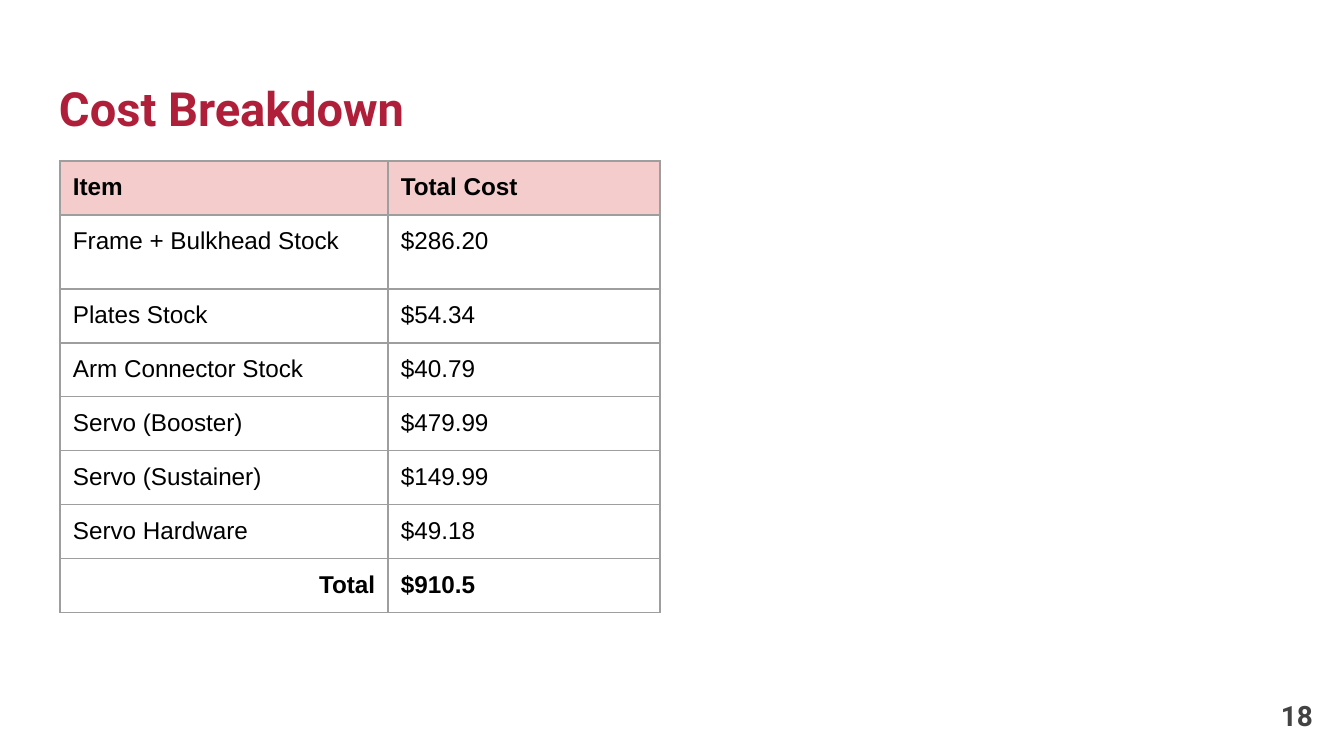
from dataclasses import dataclass

from lxml.etree import SubElement
from pptx import Presentation
from pptx.dml.color import RGBColor
from pptx.enum.text import MSO_ANCHOR as Anchor, MSO_AUTO_SIZE as AutoSize, PP_ALIGN as Align
from pptx.oxml.ns import qn
from pptx.util import Pt

EMU_PER_PX = 914400 / 134.4
WIDTH, HEIGHT = 1344, 756


def px(length):
    return round(length * EMU_PER_PX)


@dataclass(frozen=True)
class Theme:
    heading_font: str = "Roboto"
    body_font: str = "Arial"
    title_color: str = "AF1F39"
    number_color: str = "434343"
    text_color: str = "000000"
    header_fill: str = "F4CCCC"
    border_color: str = "9E9E9E"
    title_size: float = 25.2
    number_size: float = 15
    table_size: float = 13
    border_width: float = 0.75
    inset: int = 13


class SlideBuilder:
    def __init__(self, presentation, theme):
        self.theme = theme
        title_only = presentation.slide_layouts[5]
        self.slide = presentation.slides.add_slide(title_only)

    def set_text(self, frame, text, font, size, color, bold=True, align=Align.LEFT):
        frame.text = text
        paragraph = frame.paragraphs[0]
        paragraph.alignment = align
        style = paragraph.runs[0].font
        style.name, style.size, style.bold = font, Pt(size), bold
        style.color.rgb = RGBColor.from_string(color)

    def set_margins(self, target):
        inset = px(self.theme.inset)
        target.margin_left = target.margin_right = inset
        target.margin_top = target.margin_bottom = inset

    def set_frame(self, shape, anchor):
        frame = shape.text_frame
        frame.word_wrap = True
        frame.auto_size = AutoSize.NONE
        frame.vertical_anchor = anchor
        self.set_margins(frame)
        return frame

    def title(self, text, left, top, width, height):
        shape = self.slide.shapes.title
        shape.left, shape.top = px(left), px(top)
        shape.width, shape.height = px(width), px(height)
        theme = self.theme
        self.set_text(self.set_frame(shape, Anchor.TOP), text,
                      theme.heading_font, theme.title_size, theme.title_color)

    def page_number(self, text, left, top, width, height):
        shape = self.slide.shapes.add_textbox(px(left), px(top), px(width), px(height))
        theme = self.theme
        self.set_text(self.set_frame(shape, Anchor.MIDDLE), text, theme.heading_font,
                      theme.number_size, theme.number_color, align=Align.RIGHT)

    def cell_borders(self, cell):
        properties = cell._tc.get_or_add_tcPr()
        for side in ("a:lnL", "a:lnR", "a:lnT", "a:lnB"):
            line = SubElement(properties, qn(side), w=str(Pt(self.theme.border_width)))
            fill = SubElement(line, qn("a:solidFill"))
            SubElement(fill, qn("a:srgbClr"), val=self.theme.border_color)

    def table(self, rows, left, top, column_widths, row_heights):
        theme = self.theme
        table = self.slide.shapes.add_table(
            len(rows), len(column_widths), px(left), px(top),
            px(sum(column_widths)), px(sum(row_heights))).table
        table.horz_banding = False
        for column, width in zip(table.columns, column_widths):
            column.width = px(width)
        last = len(rows) - 1
        for index, (values, height) in enumerate(zip(rows, row_heights)):
            table.rows[index].height = px(height)
            for column, value in enumerate(values):
                cell = table.cell(index, column)
                self.set_margins(cell)
                self.cell_borders(cell)
                if index == 0:
                    cell.fill.solid()
                    cell.fill.fore_color.rgb = RGBColor.from_string(theme.header_fill)
                else:
                    cell.fill.background()
                total_label = index == last and column == 0
                self.set_text(cell.text_frame, value, theme.body_font, theme.table_size,
                              theme.text_color, bold=index in (0, last),
                              align=Align.RIGHT if total_label else Align.LEFT)


COSTS = [
    ("Item", "Total Cost"),
    ("Frame + Bulkhead Stock", "$286.20"),
    ("Plates Stock", "$54.34"),
    ("Arm Connector Stock", "$40.79"),
    ("Servo (Booster)", "$479.99"),
    ("Servo (Sustainer)", "$149.99"),
    ("Servo Hardware", "$49.18"),
    ("Total", "$910.5"),
]


def main():
    presentation = Presentation()
    presentation.slide_width, presentation.slide_height = px(WIDTH), px(HEIGHT)
    builder = SlideBuilder(presentation, Theme())

    # Heading
    builder.title("Cost Breakdown", 46, 66, 1253, 85)

    # Cost table: the first item row is taller than the rest
    row_heights = [54, 74] + [54] * (len(COSTS) - 2)
    builder.table(COSTS, 60, 161, [328, 272], row_heights)

    # Footer
    builder.page_number("18", 1246, 686, 80, 58)

    presentation.save("out.pptx")


if __name__ == "__main__":
    main()
